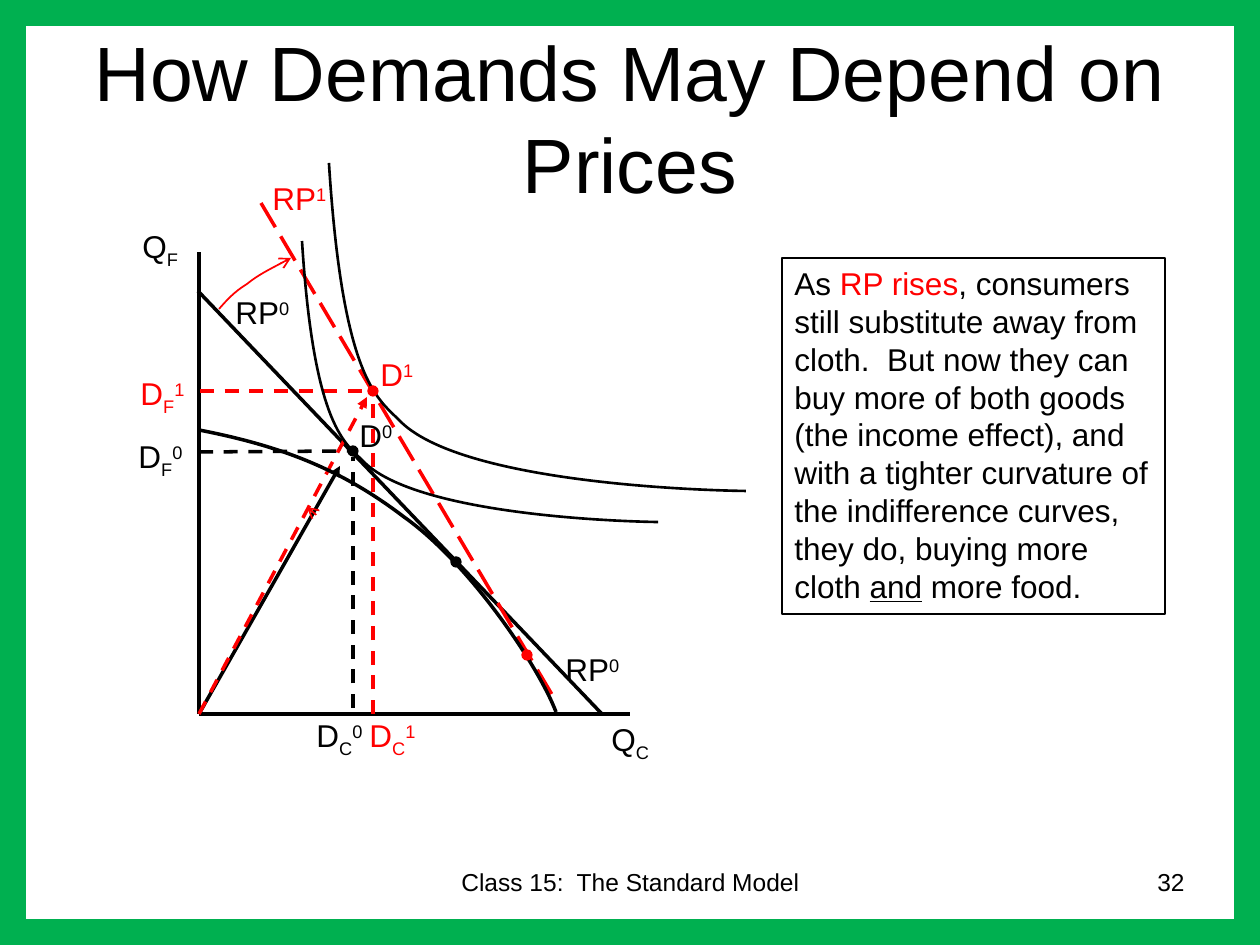
import pptx
import pptx.util
import pptx.dml.color
import pptx.enum.dml
import pptx.enum.shapes
import pptx.enum.text
import pptx.oxml.ns
import pptx.oxml.xmlchemy

PX = 914400 / 126
BLACK, RED, GREEN, WHITE = "000000", "FF0000", "00B050", "FFFFFF"
FONT = "Arial"
SUB, SUP = -25, 30
ALIGN = pptx.enum.text.PP_ALIGN
SHAPE = pptx.enum.shapes.MSO_SHAPE
DASH = pptx.enum.dml.MSO_LINE.DASH
LONG_DASH = pptx.enum.dml.MSO_LINE.LONG_DASH

ORIGIN = (199, 714)
D0, D1 = (353, 451), (373, 391)
OUTPUT_0, OUTPUT_1 = (456, 562), (527, 655)


def px(*values):
    return [pptx.util.Emu(round(v * PX)) for v in values]


def rgb(color):
    return pptx.dml.color.RGBColor.from_string(color)


def child(parent, tag, **attributes):
    element = pptx.oxml.xmlchemy.OxmlElement(tag)
    for name, value in attributes.items():
        element.set(name, value)
    parent.append(element)
    return element


def style_line(sp, color, width, dash=None, arrow=None):
    sp.line.color.rgb = rgb(color)
    sp.line.width = pptx.util.Pt(width)
    if dash is not None:
        sp.line.dash_style = dash
    if arrow:
        child(sp.line._get_or_add_ln(), "a:tailEnd", type=arrow)


def add_line(s, start, end, color=BLACK, dash=None, arrow=None):
    straight = pptx.enum.shapes.MSO_CONNECTOR.STRAIGHT
    sp = s.shapes.add_connector(straight, *px(*start, *end))
    style_line(sp, color, 2, dash, arrow)
    child(sp._element.spPr, "a:effectLst")


def add_curve(s, points, color=BLACK, width=2.0, arrow=None):
    """Draw a cubic curve: a start point, then three points per segment."""
    builder = s.shapes.build_freeform(*points[0], scale=PX)
    builder.add_line_segments(points[1:], close=False)
    sp = builder.convert_to_shape()
    sp.shadow.inherit = False
    sp.fill.background()
    style_line(sp, color, width, arrow=arrow)
    outline = sp._element.find(".//" + pptx.oxml.ns.qn("a:path"))
    steps = list(outline)[1:]
    for i in range(0, len(steps), 3):
        bezier = child(outline, "a:cubicBezTo")
        for step in steps[i:i + 3]:
            bezier.append(step[0])
            outline.remove(step)


def add_dot(s, center, color=BLACK):
    x, y = center
    sp = s.shapes.add_shape(SHAPE.OVAL, *px(x - 5, y - 5, 10, 10))
    sp.shadow.inherit = False
    sp.fill.solid()
    sp.fill.fore_color.rgb = rgb(color)
    style_line(sp, color, 0.75)


def write(sp, runs, size, align=ALIGN.LEFT, anchor=pptx.enum.text.MSO_ANCHOR.TOP):
    """Fill a shape with runs of (text, color, baseline shift, underline)."""
    tf = sp.text_frame
    tf.word_wrap = True
    tf.vertical_anchor = anchor
    p = tf.paragraphs[0]
    p.alignment = align
    for text, color, shift, underline in runs:
        r = p.add_run()
        r.text = text
        r.font.name = FONT
        r.font.size = pptx.util.Pt(size)
        r.font.color.rgb = rgb(color)
        if underline:
            r.font.underline = True
        if shift:
            r._r.get_or_add_rPr().set("baseline", str(shift * 1000))


def add_text(s, box, text, size, align, **options):
    write(s.shapes.add_textbox(*px(*box)), [(text, BLACK, 0, False)], size, align, **options)


def add_label(s, x, y, name, sub="", sup="", color=BLACK):
    parts = [(name, color, 0, False), (sub, color, SUB, False), (sup, color, SUP, False)]
    sp = s.shapes.add_textbox(*px(x, y, 94, 50))
    write(sp, [part for part in parts if part[0]], 18)


def add_box(s, box, color, width):
    sp = s.shapes.add_shape(SHAPE.RECTANGLE, *px(*box))
    sp.shadow.inherit = False
    sp.fill.background()
    style_line(sp, color, width)
    return sp


def draw_lines(s):
    add_line(s, ORIGIN, (630, 714))
    add_line(s, ORIGIN, (199, 252))
    add_line(s, (198, 291), (602, 714))
    add_line(s, (261, 203), (557, 703), RED, LONG_DASH)
    add_line(s, (199, 452), (348, 451), dash=DASH)
    add_line(s, (353, 708), (353, 457), dash=DASH)
    add_line(s, (200, 391), D1, RED, DASH)
    add_line(s, (373, 714), D1, RED, DASH)
    add_line(s, ORIGIN, (340, 466), arrow="triangle")
    add_line(s, ORIGIN, (367, 397), RED, DASH, "triangle")


def draw_curves(s):
    add_curve(s, [(199, 430), (281, 446), (341, 469), (404, 517),
                  (469, 563), (538, 665), (556, 712)])
    add_curve(s, [(302, 241), (314, 431), (347, 444), (364, 462),
                  (423, 520), (658, 522), (658, 522)], width=1.5)
    add_curve(s, [(329, 163), (343, 384), (379, 399), (401, 422),
                  (470, 489), (746, 491), (746, 491)], width=1.5)
    add_curve(s, [(219, 309), (227, 300), (234, 292), (247, 284),
                  (258, 275), (291, 258), (291, 258)], RED, 1, "arrow")
    add_curve(s, [(314, 513), (312, 512), (311, 510), (311, 509),
                  (310, 508), (307, 507), (307, 507)], RED, 1, "arrow")


def draw_labels(s):
    add_label(s, 130, 221, "Q", "F")
    add_label(s, 599, 714, "Q", "C")
    add_label(s, 304, 710, "D", "C", "0")
    add_label(s, 357, 710, "D", "C", "1", RED)
    add_label(s, 126, 431, "D", "F", "0")
    add_label(s, 128, 368, "D", "F", "1", RED)
    add_label(s, 347, 410, "D", sup="0")
    add_label(s, 368, 349, "D", sup="1", color=RED)
    add_label(s, 223, 287, "RP", sup="0")
    add_label(s, 553, 644, "RP", sup="0")
    add_label(s, 260, 173, "RP", sup="1", color=RED)


def main():
    prs = pptx.Presentation()
    prs.slide_width, prs.slide_height = px(1260, 945)
    s = prs.slides.add_slide(prs.slide_layouts[6])
    s.background.fill.solid()
    s.background.fill.fore_color.rgb = rgb(WHITE)

    add_text(s, (63, 38, 1134, 157), "How Demands May Depend on Prices", 44,
             ALIGN.CENTER, anchor=pptx.enum.text.MSO_ANCHOR.MIDDLE)
    draw_lines(s)
    draw_curves(s)
    for center, color in [(D0, BLACK), (OUTPUT_0, BLACK), (D1, RED), (OUTPUT_1, RED)]:
        add_dot(s, center, color)
    draw_labels(s)

    add_text(s, (431, 861, 399, 66), "Class 15:  The Standard Model", 14, ALIGN.CENTER)
    add_text(s, (903, 861, 294, 66), "32", 14, ALIGN.RIGHT)
    add_box(s, (0, 0, 1260, 945), GREEN, 30)
    write(add_box(s, (782, 258, 383, 356), BLACK, 0.75), [
        ("As ", BLACK, 0, False),
        ("RP rises", RED, 0, False),
        (", consumers still substitute away from cloth.  But now they can buy more "
         "of both goods (the income effect), and with a tighter curvature of the "
         "indifference curves, they do, buying more cloth ", BLACK, 0, False),
        ("and", BLACK, 0, True),
        (" more food.", BLACK, 0, False),
    ], 18)
    prs.save("out.pptx")


if __name__ == "__main__":
    main()
